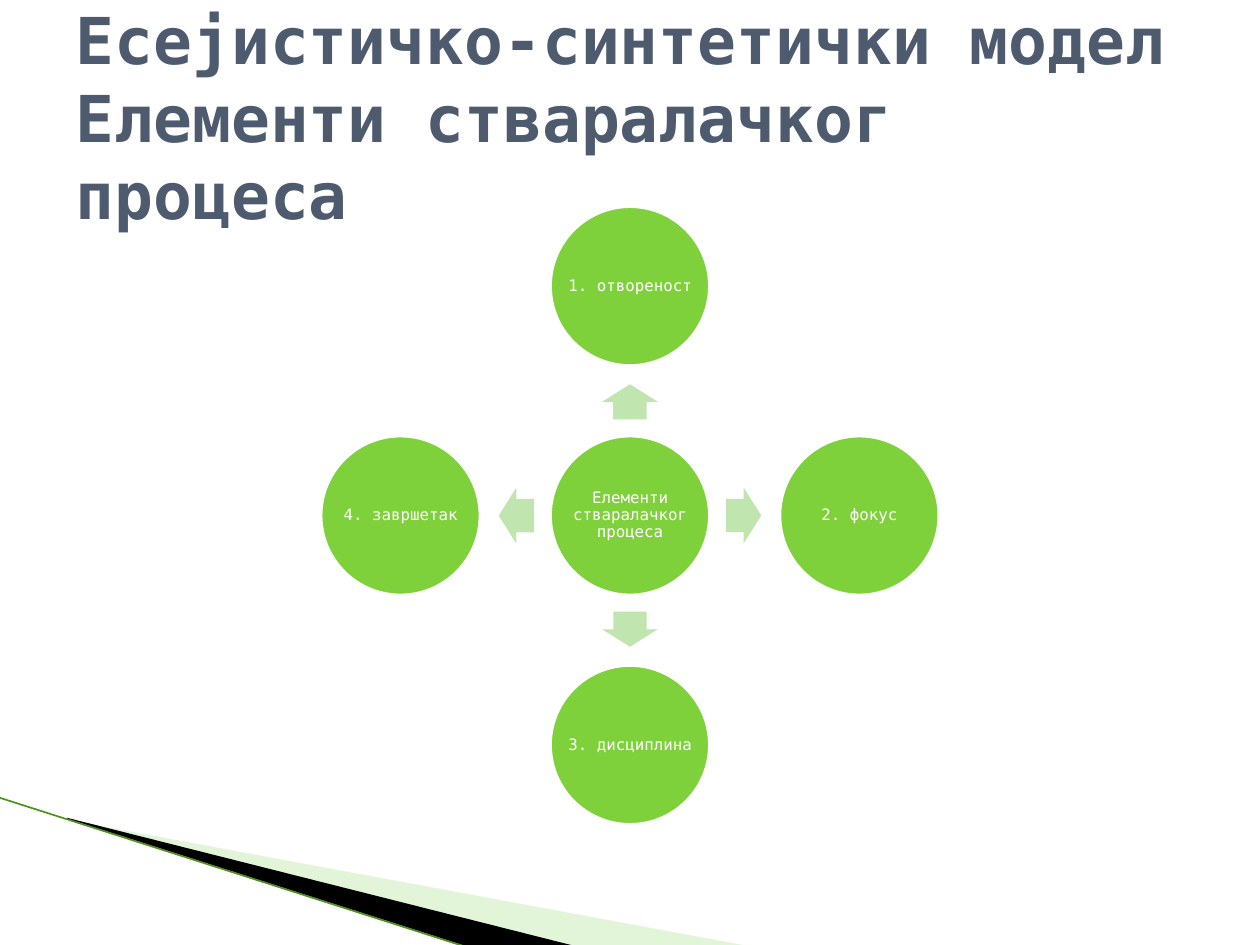
import math

import pptx
import pptx.dml.color
import pptx.enum.shapes
import pptx.enum.text
import pptx.oxml
import pptx.oxml.ns
import pptx.util
from lxml import etree

Pt = pptx.util.Pt
MSO_SHAPE = pptx.enum.shapes.MSO_SHAPE
PP_ALIGN = pptx.enum.text.PP_ALIGN
MIDDLE = pptx.enum.text.MSO_ANCHOR.MIDDLE
qn = pptx.oxml.ns.qn

FONT = "DejaVu Sans Mono"
GREEN, PALE, WHITE = "7FD13B", "C0E5AF", "FFFFFF"


def rgb(value):
    return pptx.dml.color.RGBColor.from_string(value)


def set_font(p, size, color, bold=False):
    p.font.name = FONT
    p.font.size = Pt(size)
    p.font.bold = bold
    p.font.color.rgb = rgb(color)


def fill_shape(shape, color, line=None, width=0):
    shape.shadow.inherit = False
    shape.fill.solid()
    shape.fill.fore_color.rgb = rgb(color)
    if line:
        shape.line.color.rgb = rgb(line)
        shape.line.width = Pt(width)
    else:
        shape.line.fill.background()


def add_wedge(s, left, top, points, color, opacity=None):
    pts = [(Pt(left + x), Pt(top + y)) for x, y in points]
    builder = s.shapes.build_freeform(*pts[0], scale=1.0)
    builder.add_line_segments(pts[1:], close=True)
    wedge = builder.convert_to_shape()
    fill_shape(wedge, color)
    if opacity is not None:
        clr = wedge._element.spPr.find(qn("a:solidFill"))[0]
        etree.SubElement(clr, qn("a:alpha")).set("val", str(opacity * 1000))


def add_corner(s, left, top):
    """Slanted decoration in the lower left corner."""
    add_wedge(s, left, top,
              [(39.6, 13), (428.4, 85), (328.3, 85), (39.6, 12.3)], "B8E7A1", 40)
    add_wedge(s, left, top,
              [(38.2, 11.6), (329, 85), (268, 85.5), (38.9, 12.3)], "000000")
    edge = s.shapes.add_connector(
        pptx.enum.shapes.MSO_CONNECTOR.STRAIGHT,
        Pt(left - 0.7), Pt(top), Pt(left + 267.3), Pt(top + 85.7))
    edge.line.color.rgb = rgb("4F8F20")
    edge.line.width = Pt(0.95)
    etree.SubElement(edge._element.spPr, qn("a:effectLst"))


def add_node(s, cx, cy, size, text):
    box = [Pt(v) for v in (cx - size / 2, cy - size / 2, size, size)]
    fill_shape(s.shapes.add_shape(MSO_SHAPE.OVAL, *box), GREEN, WHITE, 4.33)

    # The label uses the full square, wider than the circle's own text area
    tf = s.shapes.add_textbox(*box).text_frame
    tf.word_wrap = True
    tf.vertical_anchor = MIDDLE
    tf.margin_left = tf.margin_right = tf.margin_top = tf.margin_bottom = Pt(0.7)
    p = tf.paragraphs[0]
    p.text = text
    p.alignment = PP_ALIGN.CENTER
    p.line_spacing = 0.9
    p.space_after = Pt(3.15)
    set_font(p, 9, WHITE)


def add_arrow(s, cx, cy, angle):
    w, h = 20, 31.8
    arrow = s.shapes.add_shape(
        MSO_SHAPE.RIGHT_ARROW, Pt(cx - w / 2), Pt(cy - h / 2), Pt(w), Pt(h))
    arrow.adjustments[0], arrow.adjustments[1] = 0.6, 0.5
    arrow.rotation = angle
    fill_shape(arrow, PALE)


def add_radial(s, left, top, side, center, outer):
    """Central circle with the others around it, clockwise from the top."""
    size = 93.6
    reach = (side - size) / 2
    cx, cy = left + side / 2, top + side / 2
    add_node(s, cx, cy, size, center)
    for i, text in enumerate(outer):
        angle = 360 / len(outer) * i - 90
        dx, dy = math.cos(math.radians(angle)), math.sin(math.radians(angle))
        add_arrow(s, cx + 65 * dx, cy + 65 * dy, angle % 360)
        add_node(s, cx + reach * dx, cy + reach * dy, size, text)


def add_title(s, left, top, width, height, text):
    title = s.shapes.title
    title.left, title.top = Pt(left), Pt(top)
    title.width, title.height = Pt(width), Pt(height)
    tf = title.text_frame
    tf.word_wrap = True
    tf.auto_size = pptx.enum.text.MSO_AUTO_SIZE.NONE
    tf.vertical_anchor = MIDDLE
    p = tf.paragraphs[0]
    p.text = text
    p.alignment = PP_ALIGN.LEFT
    set_font(p, 36.9, "4E5B6F", bold=True)


def main():
    prs = pptx.Presentation()
    prs.slide_width, prs.slide_height = Pt(720), Pt(540)
    s = prs.slides.add_slide(prs.slide_layouts[5])
    s.background.fill.solid()
    s.background.fill.fore_color.rgb = rgb(WHITE)

    add_corner(s, 0, 455.7)
    add_radial(s, 182.1, 116.7, 355.8, "Елементи стваралачког процеса",
               ["1. отвореност", "2. фокус", "3. дисциплина", "4. завршетак"])
    add_title(s, 36, 21.6, 648, 90,
              "Есејистичко-синтетички модел\vЕлементи стваралачког процеса")
    prs.save("out.pptx")


if __name__ == "__main__":
    main()
